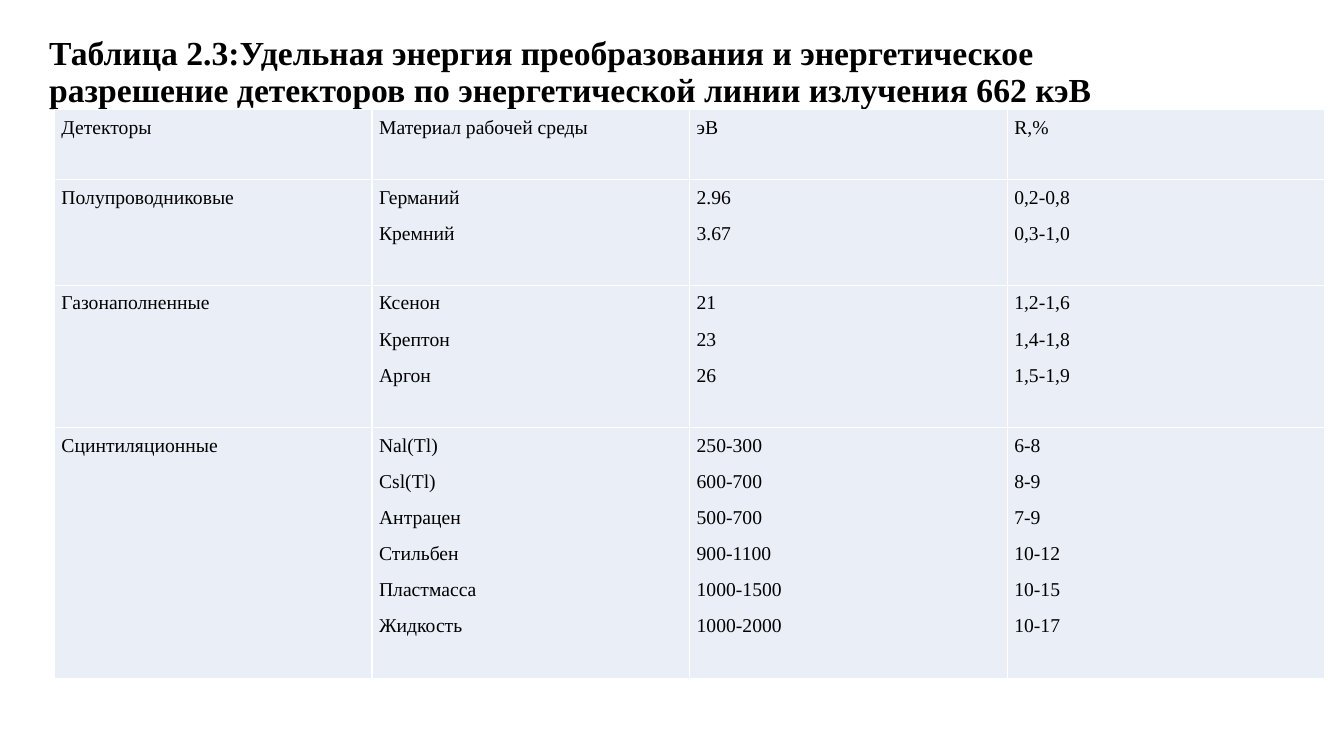
from dataclasses import dataclass

from lxml import etree
from pptx import Presentation
from pptx import util as u
from pptx.dml.color import RGBColor
from pptx.enum import text
from pptx.oxml import ns


@dataclass(frozen=True)
class Theme:
    font: str = "Times New Roman"
    ink: str = "000000"
    cell: str = "EAEFF7"
    border: str = "FFFFFF"
    border_width: float = 1
    title_size: int = 24
    cell_size: int = 14


THEME = Theme()

TITLE = (
    "Таблица 2.3:Удельная энергия преобразования и энергетическое "
    "разрешение детекторов по энергетической линии излучения 662 кэВ"
)

# Each cell is a list of lines
DETECTORS = [
    [["Детекторы"], ["Материал рабочей среды"], ["эВ"], ["R,%"]],
    [["Полупроводниковые"], ["Германий", "Кремний"], ["2.96", "3.67"], ["0,2-0,8", "0,3-1,0"]],
    [
        ["Газонаполненные"],
        ["Ксенон", "Крептон", "Аргон"],
        ["21", "23", "26"],
        ["1,2-1,6", "1,4-1,8", "1,5-1,9"],
    ],
    [
        ["Сцинтиляционные"],
        ["Nal(Tl)", "Csl(Tl)", "Антрацен", "Стильбен", "Пластмасса", "Жидкость"],
        ["250-300", "600-700", "500-700", "900-1100", "1000-1500", "1000-2000"],
        ["6-8", "8-9", "7-9", "10-12", "10-15", "10-17"],
    ],
]

COLUMN_WIDTH = 3.15
LINE_HEIGHT = 0.36


def add_span(para, words, size, bold=False):
    span = para.add_run()
    span.text = words
    span.font.name = THEME.font
    span.font.size = u.Pt(size)
    span.font.bold = bold
    span.font.color.rgb = RGBColor.from_string(THEME.ink)


def add_title(page, words):
    box = page.shapes.add_textbox(u.Inches(0.39), u.Inches(0), u.Inches(11.5), u.Inches(1.45))
    frame = box.text_frame
    frame.word_wrap = True
    frame.vertical_anchor = text.MSO_ANCHOR.MIDDLE
    para = frame.paragraphs[0]
    para.line_spacing = 0.9
    add_span(para, words, THEME.title_size, bold=True)


def add_borders(cell):
    properties = cell._tc.get_or_add_tcPr()
    for side in ("a:lnL", "a:lnR", "a:lnT", "a:lnB"):
        line = etree.SubElement(properties, ns.qn(side), w=str(u.Pt(THEME.border_width)))
        fill = etree.SubElement(line, ns.qn("a:solidFill"))
        etree.SubElement(fill, ns.qn("a:srgbClr"), val=THEME.border)


def fill_cell(cell, lines):
    add_borders(cell)
    cell.fill.solid()
    cell.fill.fore_color.rgb = RGBColor.from_string(THEME.cell)
    cell.margin_left = cell.margin_right = u.Inches(0.07)
    cell.margin_top = cell.margin_bottom = u.Inches(0.04)
    frame = cell.text_frame
    for index, words in enumerate(lines):
        para = frame.add_paragraph() if index else frame.paragraphs[0]
        para.alignment = text.PP_ALIGN.JUSTIFY
        para.line_spacing = 1.15
        para.space_after = u.Pt(8)
        add_span(para, words, THEME.cell_size)


def add_detector_table(page, rows):
    # Every row leaves one line free below its longest cell
    heights = [LINE_HEIGHT * (max(map(len, row)) + 1) - 0.03 for row in rows]
    columns = len(rows[0])
    table = page.shapes.add_table(
        len(rows), columns,
        u.Inches(0.54), u.Inches(1.09),
        u.Inches(COLUMN_WIDTH * columns), u.Inches(sum(heights)),
    ).table
    table.first_row = table.horz_banding = False
    for column in table.columns:
        column.width = u.Inches(COLUMN_WIDTH)
    for row, height, contents in zip(table.rows, heights, rows):
        row.height = u.Inches(height)
        for cell, lines in zip(row.cells, contents):
            fill_cell(cell, lines)


def main():
    deck = Presentation()
    deck.slide_width, deck.slide_height = u.Inches(13.33), u.Inches(7.5)
    page = deck.slides.add_slide(deck.slide_layouts[6])

    # Heading, then the table of detectors
    add_title(page, TITLE)
    add_detector_table(page, DETECTORS)

    deck.save("out.pptx")


if __name__ == "__main__":
    main()
